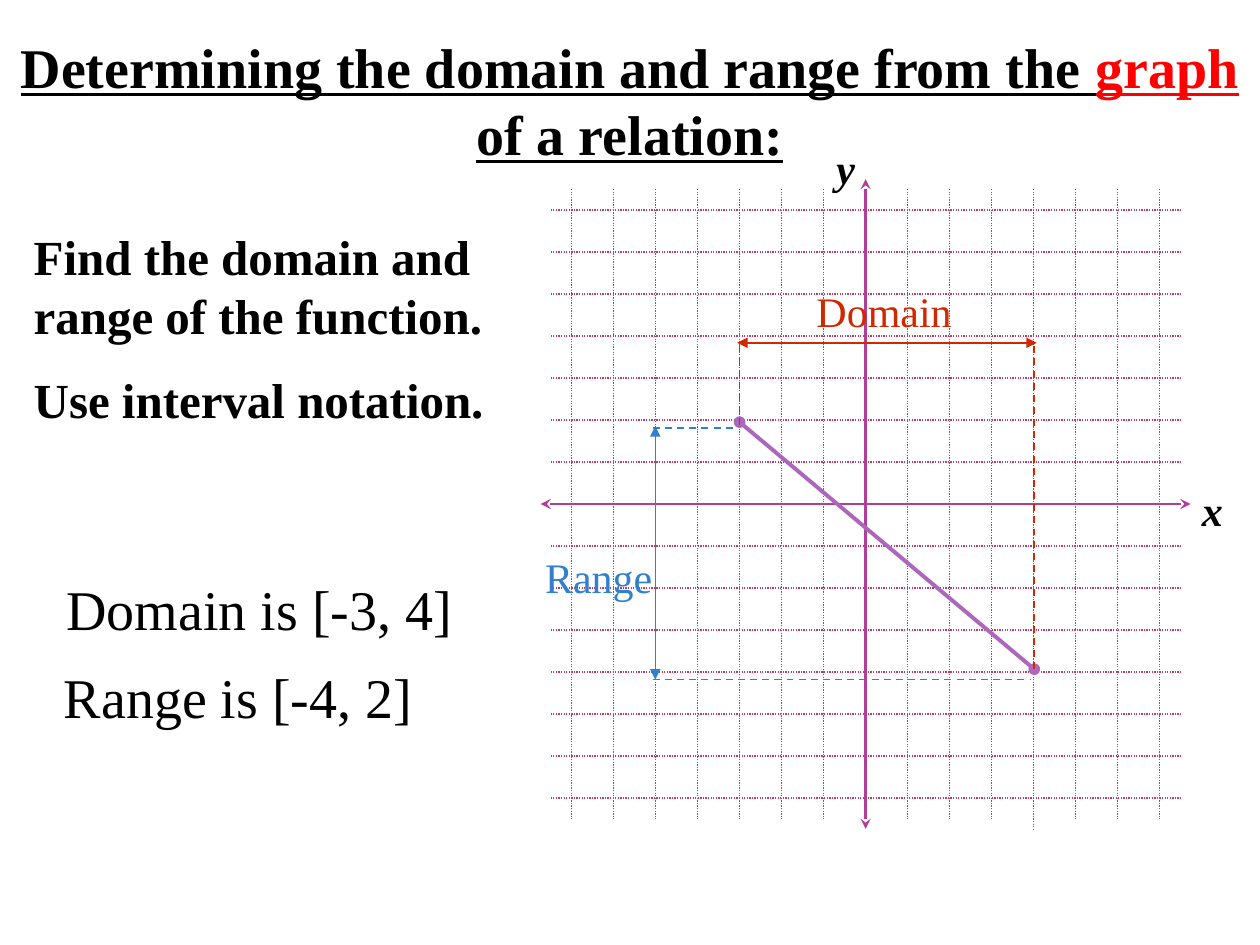
"""Build a slide that reads the domain and range of a relation from its graph."""
from lxml import etree
from pptx import Presentation
from pptx import util as u
from pptx.dml.color import RGBColor
from pptx.enum import dml, shapes, text
from pptx.oxml.ns import qn

BLACK, RED, BLUE = "000000", "D02800", "317FCD"
AXIS, GRID, GRAPH = "B13F9A", "B83D68", "AC66BB"
DASH, DOT = dml.MSO_LINE.DASH, dml.MSO_LINE.ROUND_DOT

deck = Presentation()
deck.slide_width, deck.slide_height = u.Cm(25.4), u.Cm(19.05)
page = deck.slides.add_slide(deck.slide_layouts[6])


def add_text(left, top, width, height, lines, size, color=BLACK, bold=None, italic=None, wrap=True):
    box = page.shapes.add_textbox(u.Cm(left), u.Cm(top), u.Cm(width), u.Cm(height))
    frame = box.text_frame
    frame.word_wrap = wrap
    frame.auto_size = text.MSO_AUTO_SIZE.SHAPE_TO_FIT_TEXT
    frame.text = "\n".join(lines)
    for index, para in enumerate(frame.paragraphs):
        if index:
            para.space_before = u.Pt(size / 2)
        para.font.name, para.font.size = "Times New Roman", u.Pt(size)
        para.font.bold, para.font.italic = bold, italic
        para.font.color.rgb = RGBColor.from_string(color)
    return frame.paragraphs[0]


def add_line(x1, y1, x2, y2, color, width, dash=None, ends=None):
    line = page.shapes.add_connector(
        shapes.MSO_CONNECTOR.STRAIGHT, u.Cm(x1), u.Cm(y1), u.Cm(x2), u.Cm(y2))
    line.line.color.rgb = RGBColor.from_string(color)
    line.line.width = u.Pt(width)
    if dash:
        line.line.dash_style = dash
    properties = line._element.spPr
    if ends:
        for tag in ("a:headEnd", "a:tailEnd"):
            etree.SubElement(properties.find(qn("a:ln")), qn(tag), type=ends)
    etree.SubElement(properties, qn("a:effectLst"))


add_text(0.43, 4.45, 10.36, 4.45,
         ["Find the domain and range of the function.", "Use interval notation."], 28, bold=True)

origin_x, origin_y, step = 17.45, 10.16, 2.54 / 3
half_grid, half_axis = 6.35, 6.55
add_line(origin_x, origin_y - half_axis, origin_x, origin_y + half_axis, AXIS, 1.5, ends="stealth")
add_line(origin_x - half_axis, origin_y, origin_x + half_axis, origin_y, AXIS, 1.5, ends="stealth")
ticks = [tick for tick in range(-7, 8) if tick]
for tick in ticks:
    y = origin_y + tick * step
    add_line(origin_x - half_grid, y, origin_x + half_grid, y, GRID, 0.75, DOT)
for tick in ticks:
    x = origin_x + tick * step
    bottom = origin_y + (half_axis if tick == 4 else half_grid)
    add_line(x, origin_y - half_grid, x, bottom, GRID, 0.75, DOT)

add_text(23.98, 9.65, 0.94, 1.27, ["x"], 24, bold=True, italic=True, wrap=False)
add_text(16.61, 2.74, 0.89, 1.27, ["y"], 24, bold=True, italic=True, wrap=False)
add_line(14.91, 8.51, 20.85, 13.49, GRAPH, 2.25, ends="oval")

add_text(1.09, 11.46, 9.37, 1.6, ["Domain is [-3, 4]"], 32)
add_line(20.85, 6.98, 20.85, 13.54, RED, 1, DASH)
add_line(14.91, 6.96, 14.91, 8.59, RED, 1, DASH)
add_line(14.86, 6.91, 20.9, 6.91, RED, 1, ends="triangle")
add_text(16.21, 5.64, 3.33, 1.27, ["Domain"], 24, RED)

add_text(1.04, 13.23, 8.79, 1.6, ["Range is [-4, 2]"], 32)
add_line(13.16, 13.7, 20.78, 13.7, BLUE, 1, DASH)
add_line(13.16, 8.63, 14.83, 8.63, BLUE, 1, DASH)
add_line(13.21, 8.59, 13.21, 13.7, BLUE, 0.75, ends="triangle")
add_text(10.74, 11, 3, 1.27, ["Range"], 24, BLUE)

title = add_text(0, 0.53, 25.4, 2.97, ["Determining the domain and range from the "], 32, bold=True)
title.alignment = text.PP_ALIGN.CENTER
title.font.underline = True
for words, color in (("graph", "FF0000"), (" of a relation:", BLACK)):
    span = title.add_run()
    span.text = words
    span.font.color.rgb = RGBColor.from_string(color)

deck.save("out.pptx")
